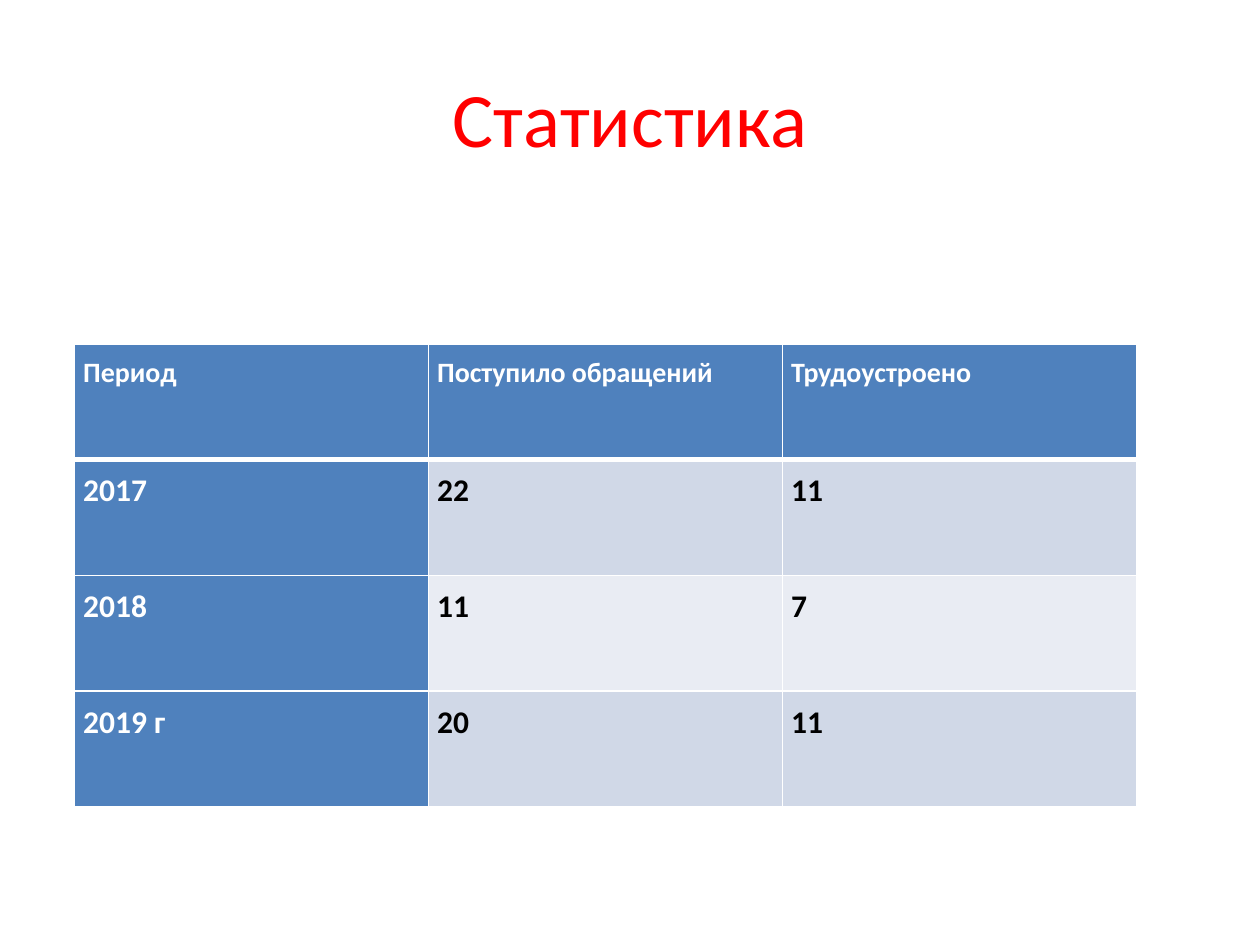
from dataclasses import dataclass

import pptx
import pptx.dml.color
import pptx.enum.text
import pptx.oxml
import pptx.oxml.ns
import pptx.util

Pt = pptx.util.Pt


@dataclass(frozen=True)
class Theme:
    font: str = "Calibri"
    title_size: int = 44
    header_size: int = 16
    body_size: int = 18
    title: str = "FF0000"
    accent: str = "4F81BD"
    bands: tuple = ("D0D8E7", "E9ECF3")
    light: str = "FFFFFF"
    dark: str = "000000"
    border: float = 0.96
    header_border: float = 3


THEME = Theme()
ROWS = [
    ["Период", "Поступило обращений", "Трудоустроено"],
    ["2017", "22", "11"],
    ["2018", "11", "7"],
    ["2019 г", "20", "11"],
]


def rgb(color):
    return pptx.dml.color.RGBColor.from_string(color)


def add_run(paragraph, text, size, color, bold=False):
    run = paragraph.add_run()
    run.text = text
    run.font.name = THEME.font
    run.font.size = Pt(size)
    run.font.bold = bold
    run.font.color.rgb = rgb(color)


def set_borders(cell, top, bottom):
    """Draw the four cell edges; call before filling, as lines come first in the XML."""
    properties = cell._tc.get_or_add_tcPr()
    widths = {"L": THEME.border, "R": THEME.border, "T": top, "B": bottom}
    for side, width in widths.items():
        properties.append(pptx.oxml.parse_xml(
            f'<a:ln{side} {pptx.oxml.ns.nsdecls("a")} w="{Pt(width)}">'
            f'<a:solidFill><a:srgbClr val="{THEME.light}"/></a:solidFill>'
            f'</a:ln{side}>'))


def place_title(slide, text, left, top, width, height):
    title = slide.shapes.title
    title.left, title.top = Pt(left), Pt(top)
    title.width, title.height = Pt(width), Pt(height)
    frame = title.text_frame
    frame.vertical_anchor = pptx.enum.text.MSO_ANCHOR.MIDDLE
    paragraph = frame.paragraphs[0]
    paragraph.alignment = pptx.enum.text.PP_ALIGN.CENTER
    add_run(paragraph, text, THEME.title_size, THEME.title)


def format_cell(cell, text, row, column):
    is_header = row == 0
    on_accent = is_header or column == 0
    set_borders(cell,
                top=THEME.header_border if row == 1 else THEME.border,
                bottom=THEME.header_border if is_header else THEME.border)
    cell.fill.solid()
    cell.fill.fore_color.rgb = rgb(
        THEME.accent if on_accent else THEME.bands[(row - 1) % 2])
    cell.margin_left = cell.margin_right = Pt(5.1)
    cell.margin_top = cell.margin_bottom = Pt(3.6)
    paragraph = cell.text_frame.paragraphs[0]
    paragraph.line_spacing = 1.15
    add_run(paragraph, text,
            THEME.header_size if is_header else THEME.body_size,
            THEME.light if on_accent else THEME.dark, bold=True)


def place_table(slide, rows, left, top, width, height):
    table = slide.shapes.add_table(
        len(rows), len(rows[0]), Pt(left), Pt(top), Pt(width), Pt(height)).table
    table.first_col = True
    for table_row in table.rows:
        table_row.height = Pt(height / len(rows))
    for row, texts in enumerate(rows):
        for column, text in enumerate(texts):
            format_cell(table.cell(row, column), text, row, column)


def main():
    presentation = pptx.Presentation()
    presentation.slide_width, presentation.slide_height = Pt(720), Pt(540)
    slide = presentation.slides.add_slide(presentation.slide_layouts[5])
    place_title(slide, "Статистика", 36, 21.6, 648, 90)
    place_table(slide, ROWS, 42.5, 196.6, 606.9, 264.4)
    presentation.save("out.pptx")


if __name__ == "__main__":
    main()
